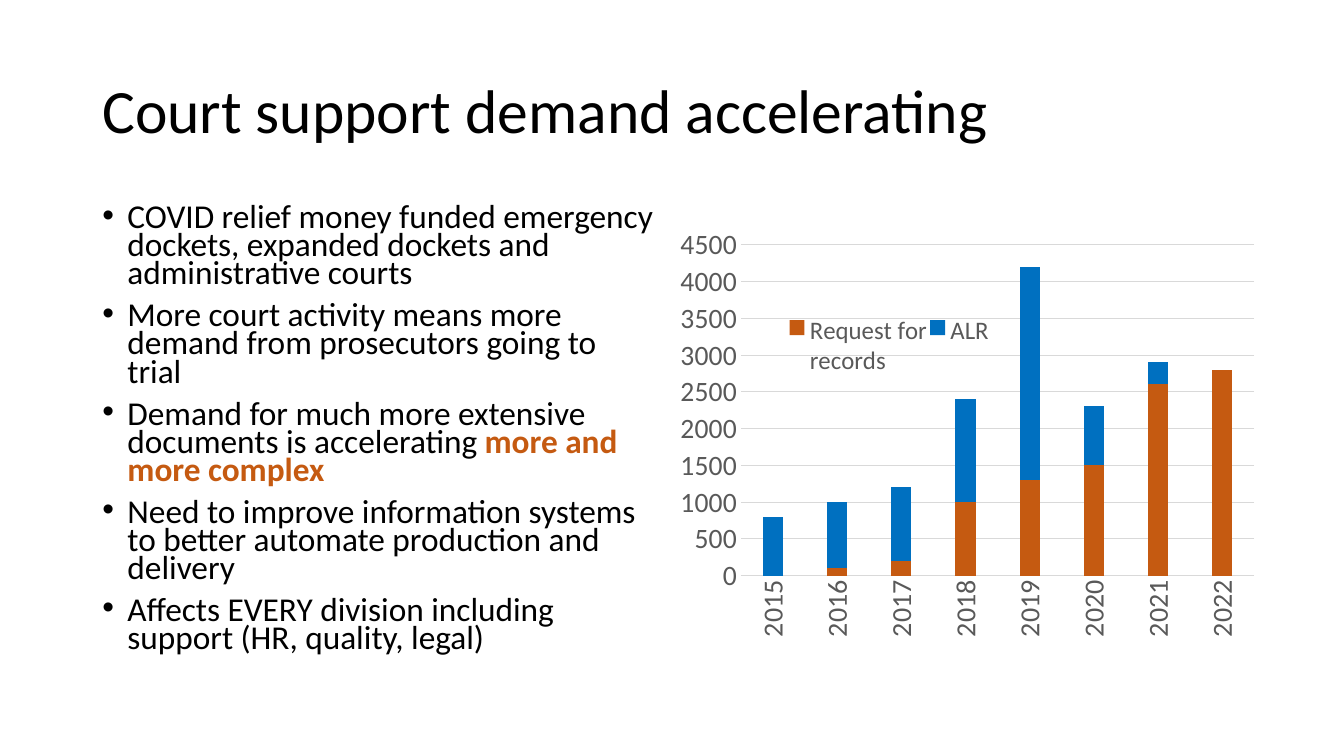
from lxml import etree
from pptx import Presentation
from pptx import util as u
from pptx.chart import data
from pptx.dml import color
from pptx.enum import chart as ch, text
from pptx.oxml import ns

ORANGE, BLUE, GRAY, GRID = "C55A11", "0070C0", "595959", "D9D9D9"


def rgb(value):
    return color.RGBColor.from_string(value)


def add_run(p, content, size, hue="000000", bold=False):
    r = p.add_run()
    r.text = content
    r.font.name = "Calibri"
    r.font.size = u.Pt(size)
    r.font.bold = bold
    r.font.color.rgb = rgb(hue)


prs = Presentation()
prs.slide_width, prs.slide_height = u.Pt(960), u.Pt(540)
s = prs.slides.add_slide(prs.slide_layouts[6])

tf = s.shapes.add_textbox(u.Pt(66), u.Pt(28.8), u.Pt(828), u.Pt(104.4)).text_frame
tf.word_wrap = True
tf.vertical_anchor = text.MSO_ANCHOR.MIDDLE
p = tf.paragraphs[0]
p.line_spacing = 0.9
add_run(p, "Court support demand accelerating", 44)

points = [
    ("COVID relief money funded emergency dockets, expanded dockets and administrative courts", ""),
    ("More court activity means more demand from prosecutors going to trial", ""),
    ("Demand for much more extensive documents is accelerating ", "more and more complex"),
    ("Need to improve information systems to better automate production and delivery", ""),
    ("Affects EVERY division including support (HR, quality, legal)", ""),
]
tf = s.shapes.add_textbox(u.Pt(66), u.Pt(144), u.Pt(408.24), u.Pt(342.6)).text_frame
tf.word_wrap = True
for i, (plain, strong) in enumerate(points):
    p = tf.add_paragraph() if i else tf.paragraphs[0]
    p.line_spacing = 0.7
    p.space_before = u.Pt(10)
    pPr = p._p.get_or_add_pPr()
    pPr.set("marL", str(u.Pt(18)))
    pPr.set("indent", str(-u.Pt(18)))
    etree.SubElement(pPr, ns.qn("a:buFont")).set("typeface", "Arial")
    etree.SubElement(pPr, ns.qn("a:buChar")).set("char", "•")
    add_run(p, plain, 23.8)
    if strong:
        add_run(p, strong, 23.8, ORANGE, True)

cd = data.CategoryChartData()
cd.categories = [str(year) for year in range(2015, 2023)]
cd.add_series("Request for records", [0, 100, 200, 1000, 1300, 1500, 2600, 2800])
cd.add_series("ALR", [800, 900, 1000, 1400, 2900, 800, 300, 0])
chart = s.shapes.add_chart(ch.XL_CHART_TYPE.COLUMN_STACKED, u.Pt(486), u.Pt(144),
                           u.Pt(414), u.Pt(342.6), cd).chart
chart.has_title = False
chart.font.name = "Calibri"
chart.font.size = u.Pt(20)
plot = chart.plots[0]
plot.gap_width, plot.overlap, plot.vary_by_categories = 219, 100, False
for series, hue in zip(plot.series, (ORANGE, BLUE)):
    series.format.fill.solid()
    series.format.fill.fore_color.rgb = rgb(hue)

years, counts = chart.category_axis, chart.value_axis
counts.minimum_scale, counts.maximum_scale, counts.major_unit = 0, 4500, 500
counts.has_major_gridlines = True
counts.format.line.fill.background()
for line in (years.format.line, counts.major_gridlines.format.line):
    line.color.rgb = rgb(GRID)
    line.width = u.Pt(0.75)
for axis in (years, counts):
    axis.major_tick_mark = axis.minor_tick_mark = ch.XL_TICK_MARK.NONE

chart.has_legend = True
legend = chart.legend
legend.position = ch.XL_LEGEND_POSITION.BOTTOM
legend.include_in_layout = False
for font, size in ((years.tick_labels.font, 20), (counts.tick_labels.font, 20), (legend.font, 18)):
    font.name = "Calibri"
    font.size = u.Pt(size)
    font.color.rgb = rgb(GRAY)
bodyPr = years._element.find(ns.qn("c:txPr")).find(ns.qn("a:bodyPr"))
bodyPr.set("rot", "-5400000")
bodyPr.set("vert", "horz")

plot_area = chart._chartSpace.chart.plotArea
legend_el = legend._element
for parent, index, inner, box in ((plot_area, 0, True, (0.09, 0.09, 0.9, 0.69)),
                                  (legend_el, 1, False, (0.17, 0.23, 0.36, 0.14))):
    for old in parent.findall(ns.qn("c:layout")):
        parent.remove(old)
    layout = etree.Element(ns.qn("c:layout"))
    manual = etree.SubElement(layout, ns.qn("c:manualLayout"))
    settings = [("layoutTarget", "inner")] if inner else []
    settings += [("xMode", "edge"), ("yMode", "edge"), *zip("xywh", box)]
    for tag, value in settings:
        etree.SubElement(manual, ns.qn("c:" + tag)).set("val", str(value))
    parent.insert(index, layout)

prs.save("out.pptx")
